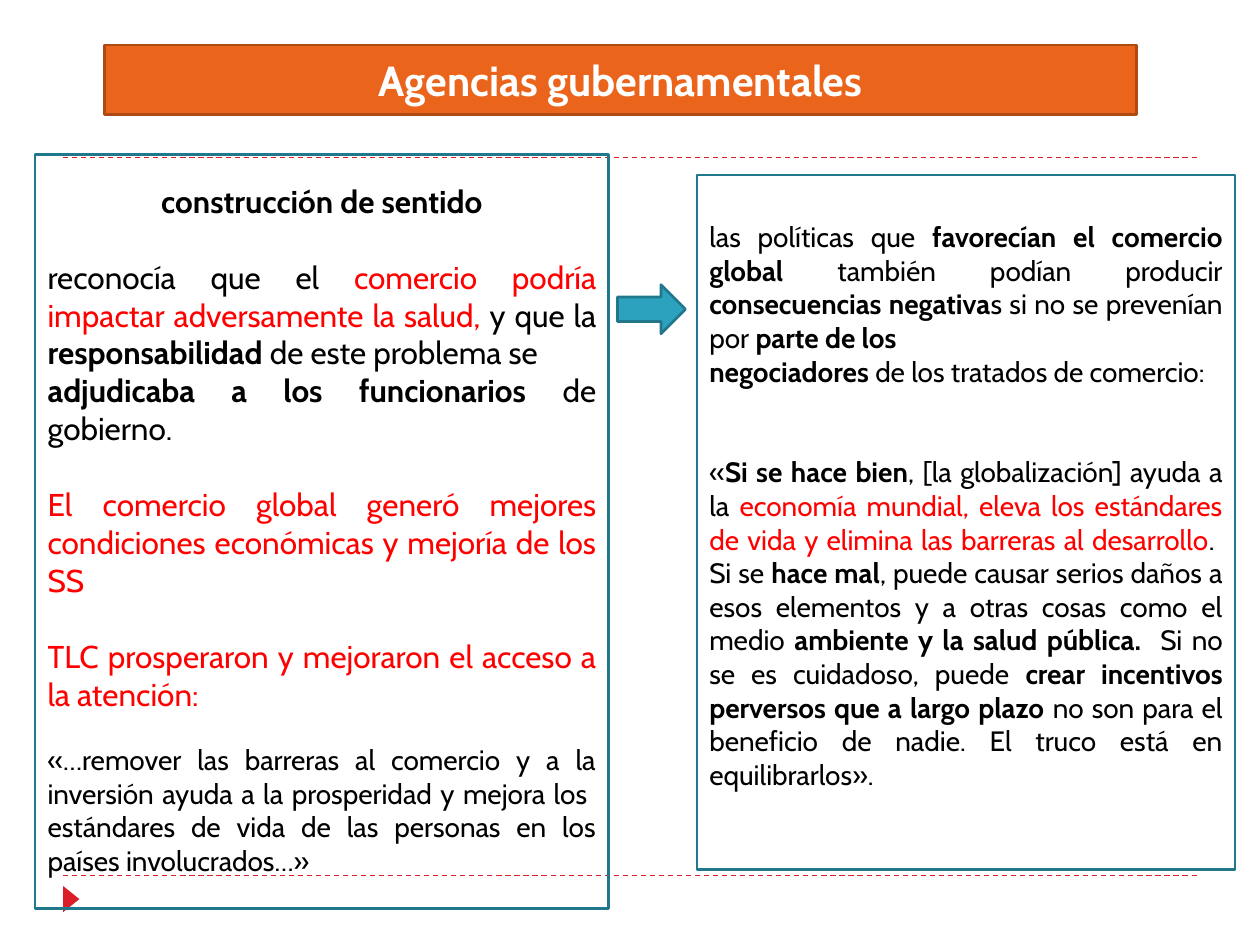
from dataclasses import dataclass
from typing import NamedTuple

from lxml.etree import SubElement
from pptx import Presentation
from pptx.dml.color import RGBColor
from pptx.enum.dml import MSO_LINE
from pptx.enum.shapes import MSO_CONNECTOR, MSO_SHAPE
from pptx.enum.text import MSO_ANCHOR, MSO_AUTO_SIZE, PP_ALIGN
from pptx.oxml import parse_xml
from pptx.oxml.ns import nsdecls, qn
from pptx.util import Cm, Pt


@dataclass(frozen=True)
class Theme:
    font: str = "Cabin"
    white: str = "FFFFFF"
    black: str = "000000"
    highlight: str = "FF0000"
    rule: str = "DA1F28"
    banner: str = "EB641B"
    banner_edge: str = "AE4A14"
    arrow: str = "2DA2BF"
    frame: str = "21788D"
    title_size: float = 24
    body_size: float = 18
    quote_size: float = 16
    edge_width: float = 1.5
    rule_width: float = 0.75


THEME = Theme()


class Box(NamedTuple):
    left: float
    top: float
    width: float
    height: float

    def lengths(self) -> list[Cm]:
        return [Cm(value) for value in self]


class Span(NamedTuple):
    text: str
    bold: bool = False
    color: str = THEME.black


@dataclass(frozen=True)
class Passage:
    spans: list[Span]
    size: float = THEME.quote_size
    gap_before: float = 0
    align: PP_ALIGN = PP_ALIGN.JUSTIFY


def strong(text: str) -> Span:
    return Span(text, bold=True)


def red(text: str) -> Span:
    return Span(text, color=THEME.highlight)


def paint(shape, fill: str | None, edge: str | None) -> None:
    if fill:
        shape.fill.solid()
        shape.fill.fore_color.rgb = RGBColor.from_string(fill)
    else:
        shape.fill.background()
    if edge:
        shape.line.color.rgb = RGBColor.from_string(edge)
        shape.line.width = Pt(THEME.edge_width)
    else:
        shape.line.fill.background()


def add_figure(slide, kind: MSO_SHAPE, box: Box, fill: str | None = None,
               edge: str | None = None, rotation: float = 0) -> None:
    figure = slide.shapes.add_shape(kind, *box.lengths())
    figure.shadow.inherit = False
    figure.rotation = rotation
    paint(figure, fill, edge)


def add_rule(slide, top: float) -> None:
    rule = slide.shapes.add_connector(
        MSO_CONNECTOR.STRAIGHT, Cm(1.27), Cm(top), Cm(24.13), Cm(top))
    rule.line.color.rgb = RGBColor.from_string(THEME.rule)
    rule.line.width = Pt(THEME.rule_width)
    rule.line.dash_style = MSO_LINE.DASH
    SubElement(rule._element.spPr, qn("a:effectLst"))


def write(paragraph, passage: Passage) -> None:
    paragraph.alignment = passage.align
    paragraph.space_before = Pt(passage.gap_before)
    for span in passage.spans:
        run = paragraph.add_run()
        run.text = span.text
        formats = {"name": THEME.font, "size": Pt(passage.size), "bold": span.bold}
        for attribute, value in formats.items():
            setattr(run.font, attribute, value)
        run.font.color.rgb = RGBColor.from_string(span.color)


def add_passages(slide, box: Box, passages: list[Passage], margin_top: float = 0.13) -> None:
    frame = slide.shapes.add_textbox(*box.lengths()).text_frame
    frame.word_wrap = True
    frame.margin_top = Cm(margin_top)
    for index, passage in enumerate(passages):
        paragraph = frame.add_paragraph() if index else frame.paragraphs[0]
        write(paragraph, passage)


def format_title(title, box: Box) -> None:
    """Turn the title placeholder into a rounded banner."""
    title.left, title.top, title.width, title.height = box.lengths()
    title._element.spPr.insert(1, parse_xml(
        f'<a:prstGeom {nsdecls("a")} prst="roundRect"><a:avLst/></a:prstGeom>'))
    paint(title, THEME.banner, THEME.banner_edge)
    frame = title.text_frame
    frame.auto_size = MSO_AUTO_SIZE.NONE
    frame.vertical_anchor = MSO_ANCHOR.MIDDLE
    write(frame.paragraphs[0], Passage(
        [Span("Agencias gubernamentales", True, THEME.white)],
        THEME.title_size, align=PP_ALIGN.CENTER))


SENSE_MAKING = [
    Passage([strong("construcción de sentido")], THEME.body_size, align=PP_ALIGN.CENTER),
    Passage([
        Span("reconocía que el "),
        red("comercio podría impactar adversamente la salud, "),
        Span("y que la "),
        strong("responsabilidad"),
        Span(" de este problema se"),
    ], THEME.body_size, 22),
    Passage([strong("adjudicaba a los funcionarios "), Span("de gobierno.")], THEME.body_size),
    Passage([red("El comercio global generó mejores condiciones económicas "
                 "y mejoría de los SS")], THEME.body_size, 22),
    Passage([red("TLC prosperaron y mejoraron el acceso a la atención:")],
            THEME.body_size, 22),
    Passage([Span("«…remover las barreras al comercio y a la inversión ayuda a la "
                  "prosperidad y mejora los  estándares de vida de las personas "
                  "en los países involucrados…»")], gap_before=17),
]

TRADE_POLICIES = [
    Passage([
        Span("las políticas que"),
        strong(" favorecían el comercio global "),
        Span("también podían producir "),
        strong("consecuencias negativa"),
        Span("s si no se prevenían por "),
        strong("parte de los"),
    ]),
    Passage([strong("negociadores "), Span("de los tratados de comercio:")]),
    Passage([
        Span("«"),
        strong("Si se hace bien"),
        Span(", [la globalización] ayuda a la "),
        red("economía mundial, eleva los estándares de vida y elimina "
            "las barreras al desarrollo"),
        Span(".  Si se "),
        strong("hace mal"),
        Span(", puede causar serios daños a esos elementos y a otras cosas como el medio "),
        strong("ambiente y la salud pública.  "),
        Span("Si no se es cuidadoso, puede "),
        strong("crear incentivos perversos que a largo plazo "),
        Span("no son para el beneficio de nadie. El truco está en equilibrarlos»."),
    ], gap_before=38.5),
]


def main() -> None:
    deck = Presentation()
    deck.slide_width, deck.slide_height = Cm(25.4), Cm(19.05)
    slide = deck.slides.add_slide(deck.slide_layouts[5])

    format_title(slide.shapes.title, Box(2.11, 0.91, 20.8, 1.4))
    for top in (17.65, 3.18):
        add_rule(slide, top)
    add_figure(slide, MSO_SHAPE.ISOSCELES_TRIANGLE, Box(1.17, 17.96, 0.53, 0.33),
               fill=THEME.rule, rotation=90)

    add_passages(slide, Box(0.71, 3.53, 11.56, 14.35), SENSE_MAKING)
    for frame in (Box(0.71, 3.12, 11.56, 15.19), Box(14.05, 3.53, 10.85, 14)):
        add_figure(slide, MSO_SHAPE.RECTANGLE, frame, edge=THEME.frame)
    add_passages(slide, Box(14.05, 3.53, 10.85, 12.65), TRADE_POLICIES, margin_top=0.9)
    add_figure(slide, MSO_SHAPE.RIGHT_ARROW, Box(12.45, 5.74, 1.37, 0.99),
               fill=THEME.arrow, edge=THEME.frame)

    deck.save("out.pptx")


if __name__ == "__main__":
    main()
